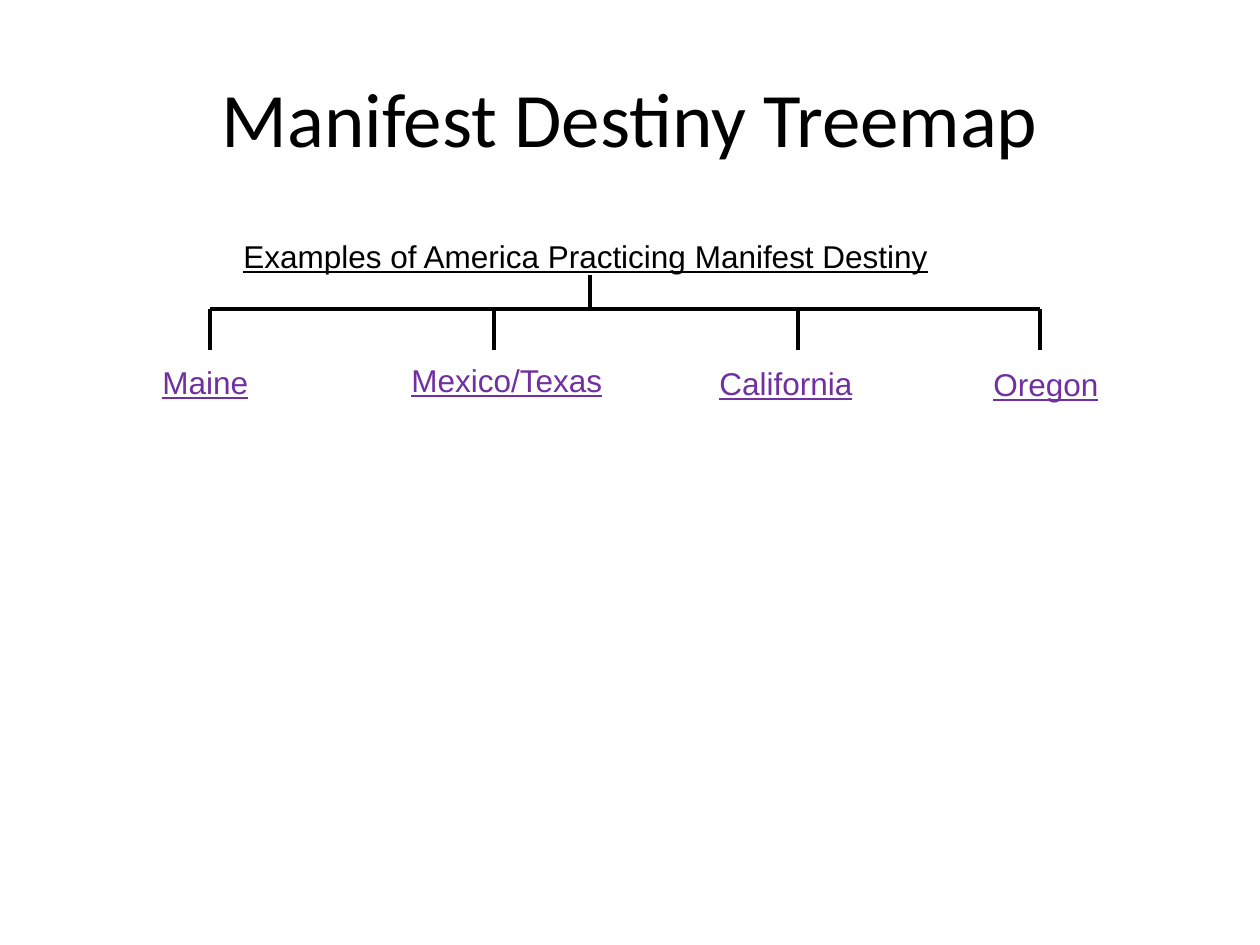
"""Build the Manifest Destiny treemap slide."""
import pptx
import pptx.dml.color
import pptx.enum.shapes
import pptx.enum.text
import pptx.oxml.ns
import pptx.util
from lxml import etree

BLACK = pptx.dml.color.RGBColor(0x00, 0x00, 0x00)
PURPLE = pptx.dml.color.RGBColor(0x70, 0x30, 0xA0)
CONNECTOR = pptx.enum.shapes.MSO_CONNECTOR
SCALE = pptx.util.Inches(1) / 126


def add_branch(kind, *ends):
    branch = slide.shapes.add_connector(kind, *(round(end * SCALE) for end in ends))
    branch.line.color.rgb = BLACK
    branch.line.width = pptx.util.Pt(2.25)
    etree.SubElement(branch._element.spPr, pptx.oxml.ns.qn("a:effectLst"))
    return branch


def add_label(text, color, *box):
    label = slide.shapes.add_textbox(*(round(side * SCALE) for side in box))
    frame = label.text_frame
    frame.text = text
    frame.word_wrap = False
    frame.auto_size = pptx.enum.text.MSO_AUTO_SIZE.SHAPE_TO_FIT_TEXT
    font = frame.paragraphs[0].runs[0].font
    font.name = "Arial"
    font.size = pptx.util.Pt(18)
    font.underline = True
    font.color.rgb = color


deck = pptx.Presentation()
deck.slide_width = round(1260 * SCALE)
deck.slide_height = round(945 * SCALE)
slide = deck.slides.add_slide(deck.slide_layouts[5])

title = slide.shapes.title
title.left, title.top, title.width, title.height = (
    round(side * SCALE) for side in (63, 38, 1134, 158))
title.text_frame.text = "Manifest Destiny Treemap"
title.text_frame.vertical_anchor = pptx.enum.text.MSO_ANCHOR.MIDDLE
heading = title.text_frame.paragraphs[0]
heading.alignment = pptx.enum.text.PP_ALIGN.CENTER
heading_font = heading.runs[0].font
heading_font.name = "Calibri"
heading_font.size = pptx.util.Pt(44)
heading_font.color.rgb = BLACK

trunk_x, trunk_top, bar_y, branch_bottom = 590, 275, 309, 350
half_drop = (bar_y - trunk_top) // 2
middle_y = trunk_top + half_drop
for bar_end, side, turn in ((210, 1, 90), (1040, -1, 270)):
    middle_x = (trunk_x + bar_end) // 2
    half_span = abs(bar_end - trunk_x) // 2
    bar = add_branch(
        CONNECTOR.ELBOW,
        middle_x - side * half_drop, middle_y - half_span,
        middle_x + side * half_drop, middle_y + half_span)
    bar._element.spPr.find(pptx.oxml.ns.qn("a:xfrm")).set("rot", str(turn * 60000))
    bar._element.spPr.find(pptx.oxml.ns.qn("a:prstGeom")).set("prst", "bentConnector2")

add_label("Examples of America Practicing Manifest Destiny", BLACK, 231, 231, 717, 50)

territories = (
    ("Maine", 210, 150, 357, 112),
    ("Mexico/Texas", 494, 399, 355, 218),
    ("California", 798, 707, 358, 160),
    ("Oregon", 1040, 981, 359, 131),
)
for territory, branch_x, left, top, width in territories:
    add_branch(CONNECTOR.STRAIGHT, branch_x, bar_y, branch_x, branch_bottom)
    add_label(territory, PURPLE, left, top, width, 50)

deck.save("out.pptx")
